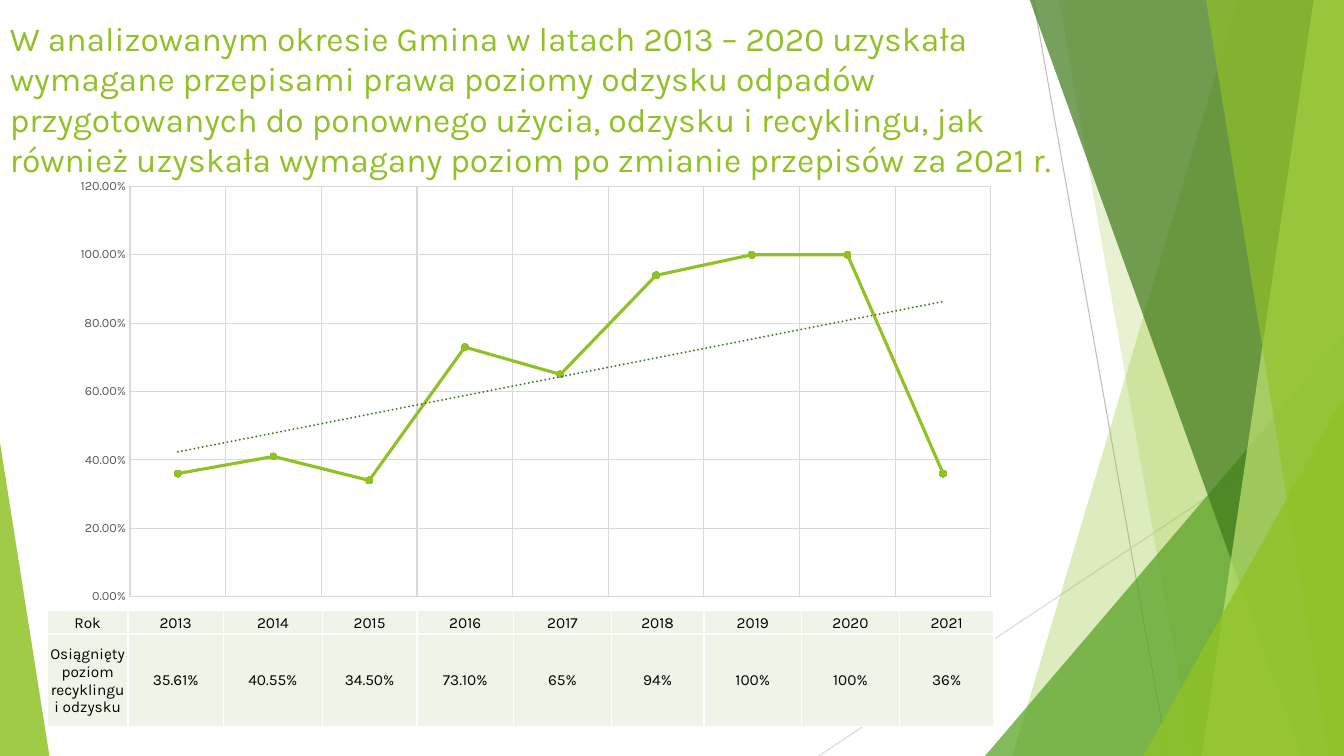
from lxml import etree
from pptx import Presentation
from pptx.chart.data import CategoryChartData
from pptx.dml.color import RGBColor
from pptx.enum.chart import XL_CHART_TYPE as ChartType, XL_MARKER_STYLE as Marker, XL_TICK_MARK as Tick
from pptx.enum.shapes import MSO_CONNECTOR as Connector, MSO_SHAPE as Shape
from pptx.enum.text import MSO_ANCHOR as Anchor, PP_ALIGN as Align
from pptx.oxml import parse_xml
from pptx.oxml.ns import nsdecls, qn
from pptx.util import Inches, Pt

FONT = "Karla"
WIDTH, HEIGHT = 13.33, 7.5
LIME = RGBColor(0x90, 0xC2, 0x26)
PALE_LIME = RGBColor(0xC0, 0xE4, 0x74)
LEAF = RGBColor(0x54, 0xA0, 0x21)
FOREST = RGBColor(0x3F, 0x78, 0x19)
MINT = RGBColor(0xEE, 0xF4, 0xE8)
SILVER = RGBColor(0xBF, 0xBF, 0xBF)
GRID = RGBColor(0xD9, 0xD9, 0xD9)
GREY = RGBColor(0x59, 0x59, 0x59)
BLACK = RGBColor(0, 0, 0)
WHITE = RGBColor(0xFF, 0xFF, 0xFF)

TITLE = (
    "W analizowanym okresie Gmina w latach 2013 – 2020 uzyskała wymagane "
    "przepisami prawa poziomy odzysku odpadów przygotowanych do ponownego "
    "użycia, odzysku i recyklingu, jak również uzyskała wymagany poziom po "
    "zmianie przepisów za 2021 r."
)
YEARS = [str(year) for year in range(2013, 2022)]
LEVELS = ["35.61%", "40.55%", "34.50%", "73.10%", "65%", "94%", "100%", "100%", "36%"]
COLUMN_SHARES = [0.8, 0.95, 0.98, 0.94, 0.96, 0.97, 0.92, 0.97, 0.97, 0.94]
ROW_SHARES = [0.23, 0.92]


def style_run(run, size, color):
    """Set the font, size and colour of a run."""
    run.font.name = FONT
    run.font.size = Pt(size)
    run.font.color.rgb = color


def paint(shape, color, opacity):
    """Fill a shape with a translucent colour and drop its outline and shadow."""
    shape.shadow.inherit = False
    shape.line.fill.background()
    shape.fill.solid()
    shape.fill.fore_color.rgb = color
    color_element = shape.fill._xPr.find(qn("a:solidFill"))[0]
    etree.SubElement(color_element, qn("a:alpha"), val=str(opacity * 1000))


def add_hairline(slide, start, end, color):
    """Draw a thin decorative line between two points."""
    line = slide.shapes.add_connector(Connector.STRAIGHT, *map(Inches, start + end))
    line.line.color.rgb = color
    line.line.width = Pt(0.75)
    etree.SubElement(line._element.spPr, qn("a:effectLst"))


def add_facet(slide, top_x, bottom_x, color, opacity):
    """Draw a facet from a slanted left edge to the right edge of the slide."""
    top = -0.01
    corners = [(WIDTH, top), (WIDTH, HEIGHT), (bottom_x, HEIGHT)]
    builder = slide.shapes.build_freeform(Inches(top_x), Inches(top), scale=1.0)
    builder.add_line_segments([(Inches(x), Inches(y)) for x, y in corners], close=True)
    paint(builder.convert_to_shape(), color, opacity)


def add_corner(slide, left, width, height, apex, color, opacity):
    """Draw a right triangle standing on the bottom edge of the slide."""
    box = map(Inches, (left, HEIGHT - height, width, height))
    triangle = slide.shapes.add_shape(Shape.ISOSCELES_TRIANGLE, *box)
    triangle.adjustments[0] = apex
    paint(triangle, color, opacity)


def add_backdrop(slide):
    """Draw the green facets and hairlines around the content."""
    add_hairline(slide, (10.25, 0), (11.58, HEIGHT), SILVER)
    add_hairline(slide, (WIDTH, 4.03), (8.12, HEIGHT), GRID)
    add_facet(slide, 12.28, 10.04, LIME, 30)
    add_facet(slide, 10.5, 11.83, LIME, 20)
    add_corner(slide, 9.77, 3.56, 4.17, 1, LEAF, 72)
    add_facet(slide, 10.21, 12.91, FOREST, 70)
    add_facet(slide, 13.03, 11.92, PALE_LIME, 70)
    add_facet(slide, 11.96, 13.18, LIME, 65)
    add_corner(slide, 11.34, 1.99, 3.57, 1, LIME, 80)
    add_corner(slide, 0, 0.49, 3.11, 0, LIME, 85)


def add_title(slide, left, top, width, height):
    """Write the heading."""
    box = slide.shapes.add_textbox(*map(Inches, (left, top, width, height)))
    frame = box.text_frame
    frame.word_wrap = True
    frame.vertical_anchor = Anchor.TOP
    run = frame.paragraphs[0].add_run()
    run.text = TITLE
    style_run(run, 24, LIME)


def set_plot_box(chart, shares):
    """Fix the inner plot area to the given shares of the chart."""
    values = "".join(f'<c:{name} val="{share:.4f}"/>' for name, share in zip("xywh", shares))
    layout = parse_xml(
        f'<c:layout {nsdecls("c")}><c:manualLayout><c:layoutTarget val="inner"/>'
        f'<c:xMode val="edge"/><c:yMode val="edge"/>{values}</c:manualLayout></c:layout>'
    )
    plot_area = chart._chartSpace.chart.plotArea
    for old_layout in plot_area.findall(qn("c:layout")):
        plot_area.remove(old_layout)
    plot_area.insert(0, layout)


def add_trend(series):
    """Add a dotted linear trend line to a series."""
    trend = parse_xml(
        f'<c:trendline {nsdecls("c", "a")}><c:spPr><a:ln w="{Pt(1.5)}" cap="rnd">'
        f'<a:solidFill><a:srgbClr val="{FOREST}"/></a:solidFill><a:prstDash val="sysDot"/>'
        '</a:ln></c:spPr><c:trendlineType val="linear"/><c:dispRSqr val="0"/>'
        '<c:dispEq val="0"/></c:trendline>'
    )
    series._element.find(qn("c:cat")).addprevious(trend)


def add_level_chart(slide, left, top, width, height):
    """Draw the yearly recycling levels as a line with a trend."""
    data = CategoryChartData(number_format="0.00%")
    data.categories = [str(number) for number in range(1, len(LEVELS) + 1)]
    data.add_series("Series 1", [round(float(level.rstrip("%")) / 100, 2) for level in LEVELS])
    box = map(Inches, (left, top, width, height))
    chart = slide.shapes.add_chart(ChartType.LINE_MARKERS, *box, data).chart
    chart.has_legend = False
    chart.has_title = False
    chart.font.name = FONT
    chart.font.size = Pt(10)
    chart.font.color.rgb = BLACK
    set_plot_box(chart, (0.68 / width, 0.16 / height, 8.54 / width, 4.07 / height))

    chart.category_axis.visible = False
    for axis in (chart.category_axis, chart.value_axis):
        axis.has_major_gridlines = True
        axis.major_gridlines.format.line.color.rgb = GRID
        axis.major_gridlines.format.line.width = Pt(0.75)
    levels = chart.value_axis
    levels.minimum_scale, levels.maximum_scale, levels.major_unit = 0, 1.2, 0.2
    levels.major_tick_mark = Tick.NONE
    levels.format.line.fill.background()
    levels.tick_labels.number_format = "0.00%"
    levels.tick_labels.number_format_is_linked = False
    levels.tick_labels.font.name = FONT
    levels.tick_labels.font.size = Pt(9)
    levels.tick_labels.font.color.rgb = GREY

    chart.plots[0].vary_by_categories = False
    series = chart.plots[0].series[0]
    series.smooth = False
    series.format.line.color.rgb = LIME
    series.format.line.width = Pt(2.25)
    series.marker.style = Marker.CIRCLE
    series.marker.size = 5
    series.marker.format.fill.solid()
    series.marker.format.fill.fore_color.rgb = LIME
    series.marker.format.line.color.rgb = LIME
    add_trend(series)


def fill_cell(cell, text):
    """Write one centred table cell with white borders."""
    cell.fill.solid()
    cell.fill.fore_color.rgb = MINT
    cell.vertical_anchor = Anchor.MIDDLE
    cell.margin_left = cell.margin_right = cell.margin_top = Inches(0.01)
    cell.margin_bottom = 0
    paragraph = cell.text_frame.paragraphs[0]
    paragraph.alignment = Align.CENTER
    run = paragraph.add_run()
    run.text = text
    style_run(run, 11, BLACK)
    for position, side in enumerate(("lnL", "lnR", "lnT", "lnB")):
        border = parse_xml(
            f'<a:{side} {nsdecls("a")} w="{Pt(1)}"><a:solidFill>'
            f'<a:srgbClr val="{WHITE}"/></a:solidFill></a:{side}>'
        )
        cell._tc.tcPr.insert(position, border)


def add_level_table(slide, left, top, width, height):
    """Place the table of years and achieved levels."""
    rows = [["Rok"] + YEARS, ["Osiągnięty poziom recyklingu i odzysku"] + LEVELS]
    box = map(Inches, (left, top, width, height))
    table = slide.shapes.add_table(len(rows), len(rows[0]), *box).table
    table.first_row = table.horz_banding = False
    for column, share in zip(table.columns, COLUMN_SHARES):
        column.width = Inches(width * share / sum(COLUMN_SHARES))
    for row, share, texts in zip(table.rows, ROW_SHARES, rows):
        row.height = Inches(height * share / sum(ROW_SHARES))
        for cell, text in zip(row.cells, texts):
            fill_cell(cell, text)


def main():
    """Build the slide and save it."""
    presentation = Presentation()
    presentation.slide_width = Inches(WIDTH)
    presentation.slide_height = Inches(HEIGHT)
    slide = presentation.slides.add_slide(presentation.slide_layouts[6])
    add_backdrop(slide)
    add_title(slide, 0, 0.13, 10.7, 1.44)
    add_level_chart(slide, 0.61, 1.69, 9.4, 4.39)
    add_level_table(slide, 0.47, 6.06, 9.39, 1.15)
    presentation.save("out.pptx")


if __name__ == "__main__":
    main()
